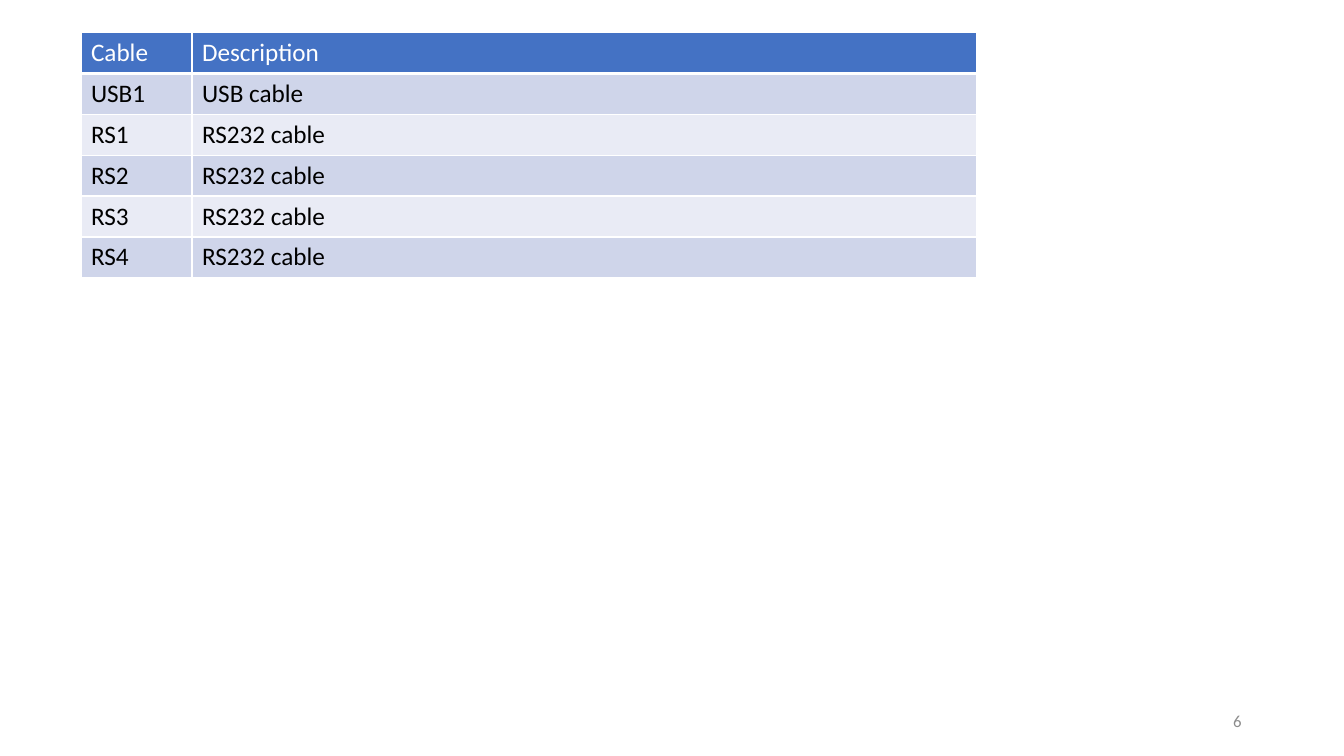
from lxml import etree
from pptx import Presentation
from pptx import util as u
from pptx.dml import color
from pptx.enum import text
from pptx.oxml import ns

COLORS = {
    "header": "4472C4",
    "odd": "CFD5EA",
    "even": "E9EBF5",
    "white": "FFFFFF",
    "black": "000000",
    "gray": "8C8C8C",
}
CABLES = [
    ("Cable", "Description"),
    ("USB1", "USB cable"),
    ("RS1", "RS232 cable"),
    ("RS2", "RS232 cable"),
    ("RS3", "RS232 cable"),
    ("RS4", "RS232 cable"),
]


def add_run(paragraph, words, size, tone):
    run = paragraph.add_run()
    run.text = words
    run.font.name = "Calibri"
    run.font.size = u.Pt(size)
    run.font.bold = False
    run.font.color.rgb = color.RGBColor.from_string(COLORS[tone])


def add_border(cell, side, width):
    line = etree.SubElement(cell._tc.get_or_add_tcPr(), ns.qn("a:" + side), w=str(u.Pt(width)))
    fill = etree.SubElement(line, ns.qn("a:solidFill"))
    etree.SubElement(fill, ns.qn("a:srgbClr"), val=COLORS["white"])


deck = Presentation()
deck.slide_width = u.Cm(33.87)
deck.slide_height = u.Cm(19.05)
slide = deck.slides.add_slide(deck.slide_layouts[6])

row_height = u.Cm(1.03)
cable_table = slide.shapes.add_table(
    len(CABLES), 2, u.Cm(2.04), u.Cm(0.82), u.Cm(22.58), row_height * len(CABLES)
).table
cable_table.columns[0].width = u.Cm(2.8)
cable_table.columns[1].width = u.Cm(19.78)

for row, entries in enumerate(CABLES):
    cable_table.rows[row].height = row_height
    band = "header" if row == 0 else "odd" if row % 2 else "even"
    for column, entry in enumerate(entries):
        cell = cable_table.cell(row, column)
        add_run(cell.text_frame.paragraphs[0], entry, 18, "black" if row else "white")
        for side in ("lnL", "lnR", "lnT", "lnB"):
            heavy = (row, side) in ((0, "lnB"), (1, "lnT"))
            add_border(cell, side, 3 if heavy else 1)
        cell.fill.solid()
        cell.fill.fore_color.rgb = color.RGBColor.from_string(COLORS[band])

page_number = slide.shapes.add_textbox(u.Cm(23.92), u.Cm(17.66), u.Cm(7.62), u.Cm(1.01)).text_frame
page_number.word_wrap = True
page_number.vertical_anchor = text.MSO_ANCHOR.MIDDLE
page_number.paragraphs[0].alignment = text.PP_ALIGN.RIGHT
add_run(page_number.paragraphs[0], "6", 12, "gray")

deck.save("out.pptx")
